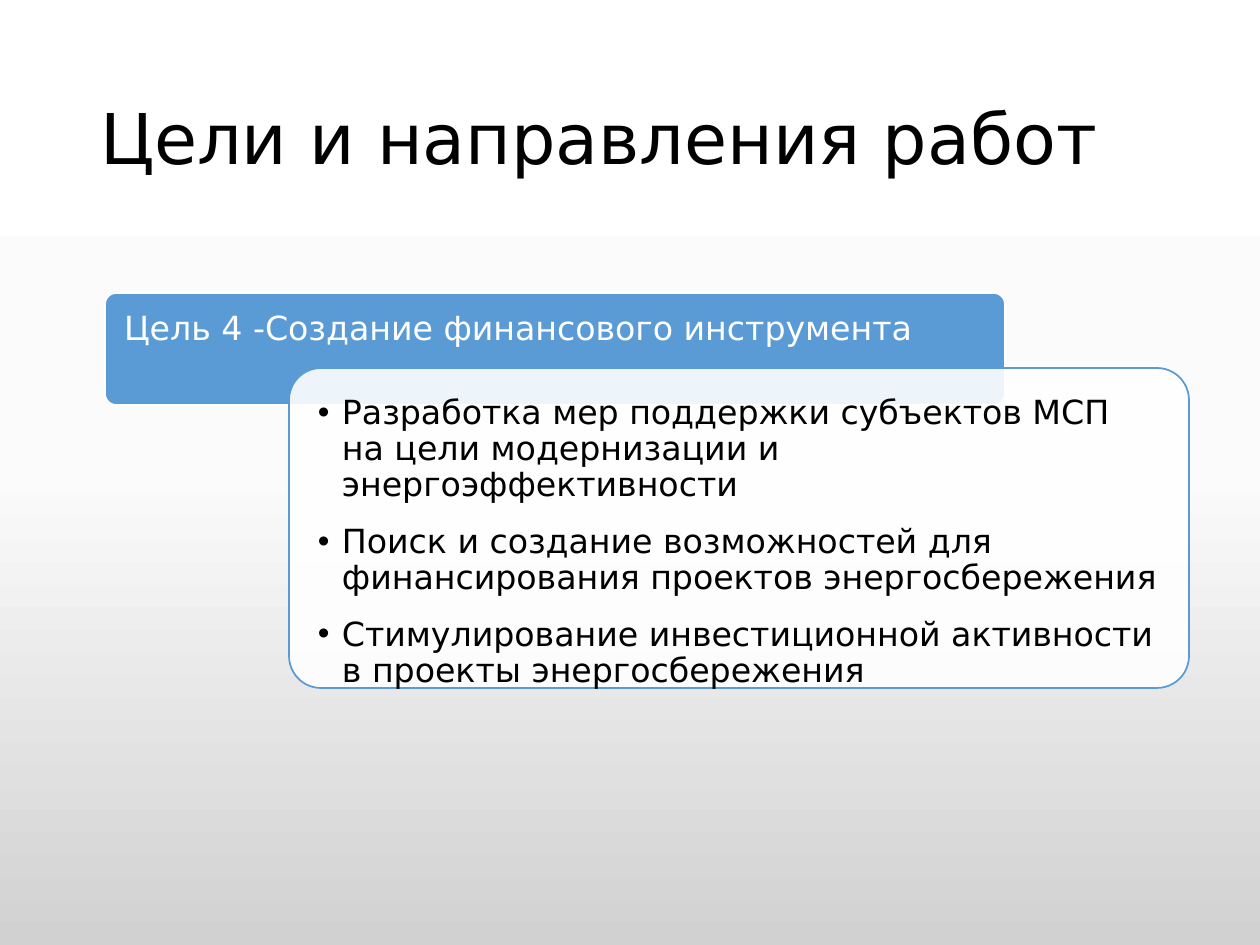
from copy import deepcopy
from dataclasses import dataclass

from pptx import Presentation
from pptx.dml.color import RGBColor as RGB
from pptx.enum.shapes import MSO_SHAPE as SHAPE
from pptx.enum.text import MSO_ANCHOR as ANCHOR, MSO_AUTO_SIZE as AUTOSIZE, PP_ALIGN as ALIGN
from pptx.oxml.ns import qn
from pptx.util import Emu, Pt

PX_PER_INCH = 126


def px(n: int) -> Emu:
    return Emu(round(n * 914400 / PX_PER_INCH))


@dataclass(frozen=True)
class Theme:
    font: str = "DejaVu Sans"
    title_size: int = 40
    text_size: int = 19
    black: RGB = RGB(0, 0, 0)
    white: RGB = RGB(255, 255, 255)
    blue: RGB = RGB(0x5B, 0x9B, 0xD5)
    background: tuple = ((0, "FFFFFF"), (50, "FBFBFB"), (100, "D1D1D1"))


@dataclass(frozen=True)
class Box:
    left: int
    top: int
    width: int
    height: int

    def emu(self) -> tuple:
        return px(self.left), px(self.top), px(self.width), px(self.height)


THEME = Theme()
TITLE = Box(87, 50, 1086, 183)
HEADER = Box(105, 293, 900, 112)
HEADER_TEXT = Box(105, 293, 900, 76)
CARD = Box(289, 368, 900, 320)
CARD_TEXT = Box(299, 377, 881, 301)
INSET = 19
BULLET_INDENT = 24

GOAL = "Цель 4 -Создание финансового инструмента"
TASKS = (
    "Разработка мер поддержки субъектов МСП на цели модернизации и энергоэффективности",
    "Поиск и создание возможностей для финансирования проектов энергосбережения",
    "Стимулирование инвестиционной активности в проекты энергосбережения",
)


def paint_background(s) -> None:
    fill = s.background.fill
    fill.gradient()
    fill.gradient_angle = 270
    stops = fill.gradient_stops
    gs_list = s.background._cSld.find(".//" + qn("a:gsLst"))
    gs_list.append(deepcopy(gs_list[-1]))
    for stop, (percent, color) in zip(fill.gradient_stops, THEME.background):
        stop.position = percent / 100
        stop.color.rgb = RGB.from_string(color)
    for gs in gs_list:
        for effect in list(gs[0]):
            gs[0].remove(effect)


def add_panel(s, box: Box, fill: RGB, line: RGB, opacity: int = 100) -> None:
    sp = s.shapes.add_shape(SHAPE.ROUNDED_RECTANGLE, *box.emu())
    sp.adjustments[0] = 0.1
    sp.shadow.inherit = False
    sp.fill.solid()
    sp.fill.fore_color.rgb = fill
    sp.line.color.rgb = line
    sp.line.width = Pt(1)
    if opacity < 100:
        color = sp._element.spPr.find(qn("a:solidFill"))[0]
        color.makeelement(qn("a:alpha"), {})
        alpha = color.makeelement(qn("a:alpha"), {"val": str(opacity * 1000)})
        color.append(alpha)


def write(sp, box: Box, lines: tuple, size: int, color: RGB, anchor=ANCHOR.TOP,
          inset: int = INSET, space_after: int = 0) -> None:
    sp.left, sp.top, sp.width, sp.height = box.emu()
    tf = sp.text_frame
    tf.text = "\n".join(lines)
    tf.word_wrap = True
    tf.auto_size = AUTOSIZE.NONE
    tf.vertical_anchor = anchor
    tf.margin_left = tf.margin_right = px(inset)
    tf.margin_top = tf.margin_bottom = px(min(inset, INSET))
    for p in tf.paragraphs:
        p.alignment = ALIGN.LEFT
        p.line_spacing = 0.9
        p.space_before = Pt(0)
        p.space_after = Pt(space_after)
        p.font.name = THEME.font
        p.font.size = Pt(size)
        p.font.color.rgb = color


def add_bullets(sp) -> None:
    for p in sp.text_frame.paragraphs:
        p.level = 1
        pPr = p._p.get_or_add_pPr()
        pPr.set("marL", str(px(BULLET_INDENT)))
        pPr.set("indent", str(-px(BULLET_INDENT)))
        bullet = pPr.makeelement(qn("a:buChar"), {"char": "•"})
        pPr.find(qn("a:spcAft")).addnext(bullet)


def main() -> None:
    prs = Presentation()
    prs.slide_width, prs.slide_height = px(1260), px(945)
    s = prs.slides.add_slide(prs.slide_layouts[1])
    paint_background(s)

    # Title
    write(s.shapes.title, TITLE, ("Цели и направления работ",), THEME.title_size,
          THEME.black, ANCHOR.MIDDLE, inset=13)

    # Goal header
    add_panel(s, HEADER, THEME.blue, THEME.white)
    goal = s.shapes.add_textbox(*HEADER_TEXT.emu())
    write(goal, HEADER_TEXT, (GOAL,), THEME.text_size, THEME.white)

    # Task card, with the list in front of it
    add_panel(s, CARD, THEME.white, THEME.blue, opacity=90)
    tasks = s.placeholders[1]
    write(tasks, CARD_TEXT, TASKS, THEME.text_size, THEME.black, space_after=12)
    add_bullets(tasks)
    s.shapes._spTree.append(tasks._element)

    prs.save("out.pptx")


if __name__ == "__main__":
    main()
